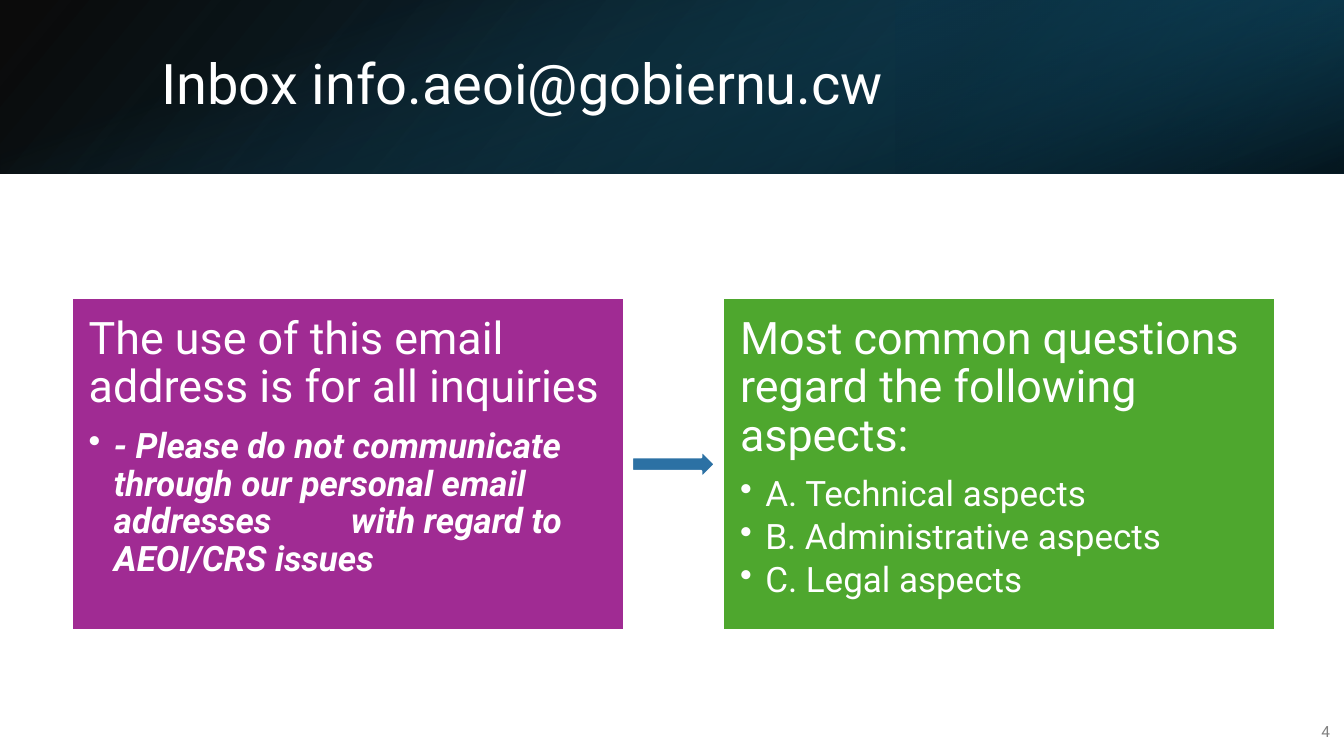
from pptx import Presentation
from pptx.dml.color import RGBColor
from pptx.enum.shapes import MSO_SHAPE
from pptx.enum.text import MSO_ANCHOR, PP_ALIGN
from pptx.oxml.ns import qn
from pptx.util import Inches, Pt

RECT, ARROW = MSO_SHAPE.RECTANGLE, MSO_SHAPE.RIGHT_ARROW
TOP, MIDDLE = MSO_ANCHOR.TOP, MSO_ANCHOR.MIDDLE
LEFT, RIGHT = PP_ALIGN.LEFT, PP_ALIGN.RIGHT

WHITE = RGBColor(0xFF, 0xFF, 0xFF)
BLACK = RGBColor(0x00, 0x00, 0x00)
GRAY = RGBColor(0x80, 0x80, 0x80)
NAVY = RGBColor(0x10, 0x48, 0x62)
DEEP = RGBColor(0x0B, 0x30, 0x41)
TEAL = RGBColor(0x15, 0x60, 0x82)
PURPLE = RGBColor(0xA0, 0x2B, 0x93)
GREEN = RGBColor(0x4E, 0xA7, 0x2E)
BLUE = RGBColor(0x2C, 0x71, 0xA4)

FONT = "Roboto"
WIDE, HIGH, BAND = 13.33, 7.5, 1.72
PAD = Inches(0.17)

# box, rotation, flipped, angle, stops of (position, colour, opacity in percent)
LAYERS = [
    ((0, 0, WIDE, BAND), 0, True, 140, [(0, BLACK, 96), (1, NAVY, 100)]),
    ((WIDE * 2 / 3, 0, WIDE / 3, BAND), 180, True, 320,
     [(0.19, DEEP, 68), (1, TEAL, 79)]),
    (((WIDE - BAND) / 2, (BAND - WIDE) / 2, BAND, WIDE), 90, False, 340,
     [(0.23, TEAL, 0), (0.99, BLACK, 74)]),
]

CARDS = [
    (PURPLE, "The use of this email address is for all inquiries",
     ["- Please do not communicate through our personal email addresses "
      "\t  with regard to AEOI/CRS issues"], True),
    (GREEN, "Most common questions regard the following aspects:",
     ["A. Technical aspects", "B. Administrative aspects",
      "C. Legal aspects"], False),
]


def style(target, values):
    for name, value in values.items():
        setattr(target, name, value)


def write(para, text, size, color, **more):
    run = para.add_run()
    run.text = text
    style(run.font, {"name": FONT, "size": Pt(size), **more})
    run.font.color.rgb = color


def add_box(slide, kind, box):
    shape = slide.shapes.add_shape(kind, *map(Inches, box))
    shape.shadow.inherit = False
    return shape


def add_solid(slide, kind, box, color):
    shape = add_box(slide, kind, box)
    shape.fill.solid()
    shape.fill.fore_color.rgb = color
    shape.line.color.rgb = WHITE
    shape.line.width = Pt(1.5)
    return shape


def add_layer(slide, box, turn, flip, angle, stops):
    shape = add_box(slide, RECT, box)
    shape.rotation = turn
    shape.line.fill.background()
    shape.fill.gradient()
    shape.fill.gradient_angle = 360 - angle
    props = shape._element.spPr
    if flip:
        props.find(qn("a:xfrm")).set("flipH", "1")
    for stop, (place, color, _) in zip(shape.fill.gradient_stops, stops):
        stop.position = place
        stop.color.rgb = color
    colors = props.find(qn("a:gradFill")).iter(qn("a:srgbClr"))
    for node, (_, _, shown) in zip(colors, stops):
        alpha = node.makeelement(qn("a:alpha"), {"val": str(shown * 1000)})
        node.append(alpha)


def add_head(slide, box, text):
    for layer in LAYERS:
        add_layer(slide, *layer)
    title = slide.shapes.title
    style(title, dict(zip(("left", "top", "width", "height"),
                          map(Inches, box))))
    slide.shapes._spTree.append(title._element)
    title.text_frame.vertical_anchor = MIDDLE
    para = title.text_frame.paragraphs[0]
    style(para, {"alignment": LEFT, "line_spacing": 0.9})
    write(para, text, 40, WHITE)


def set_bullet(para):
    props = para._p.get_or_add_pPr()
    indent = Inches(0.25)
    for name, value in {"marL": indent, "indent": -indent,
                        "defTabSz": Inches(1.215)}.items():
        props.set(name, str(value))
    props.append(props.makeelement(qn("a:buChar"), {"char": "•"}))


def add_card(slide, box, color, head, items, strong):
    frame = add_solid(slide, RECT, box, color).text_frame
    style(frame, {"word_wrap": True, "vertical_anchor": TOP,
                  "margin_left": PAD, "margin_right": PAD,
                  "margin_top": PAD, "margin_bottom": PAD})
    para = frame.paragraphs[0]
    style(para, {"alignment": LEFT, "line_spacing": 0.9,
                 "space_after": Pt(32 * 0.35)})
    write(para, head, 32, WHITE)
    for item in items:
        para = frame.add_paragraph()
        style(para, {"alignment": LEFT, "line_spacing": 0.9, "level": 1,
                     "space_after": Pt(25 * 0.15)})
        set_bullet(para)
        write(para, item, 25, WHITE, bold=strong, italic=strong)


def add_flow(slide, box):
    """Two equal cards at the ends of the box, with an arrow between them."""
    left, top, width, height = box
    card, long, thick = 5.48, 0.82, 0.27
    for step, data in enumerate(CARDS):
        add_card(slide, (left + step * (width - card), top, card, height),
                 *data)
    add_solid(slide, ARROW, (left + (width - long) / 2,
                             top + (height - thick) / 2, long, thick), BLUE)


def add_page(slide, box, number):
    frame = slide.shapes.add_textbox(*map(Inches, box)).text_frame
    style(frame, {"word_wrap": True, "vertical_anchor": MIDDLE})
    para = frame.paragraphs[0]
    style(para, {"alignment": RIGHT, "space_after": Pt(6)})
    write(para, number, 11, GRAY)


def main():
    deck = Presentation()
    style(deck, {"slide_width": Inches(WIDE), "slide_height": Inches(HIGH)})
    slide = deck.slides.add_slide(deck.slide_layouts[5])
    add_head(slide, (1.5, 0.38, 10.98, 0.96), "Inbox info.aeoi@gobiernu.cw")
    add_flow(slide, (0.71, 2.96, 11.94, 3.29))
    add_page(slide, (12.8, 7.06, 0.49, 0.4), "4")
    deck.save("out.pptx")


if __name__ == "__main__":
    main()
